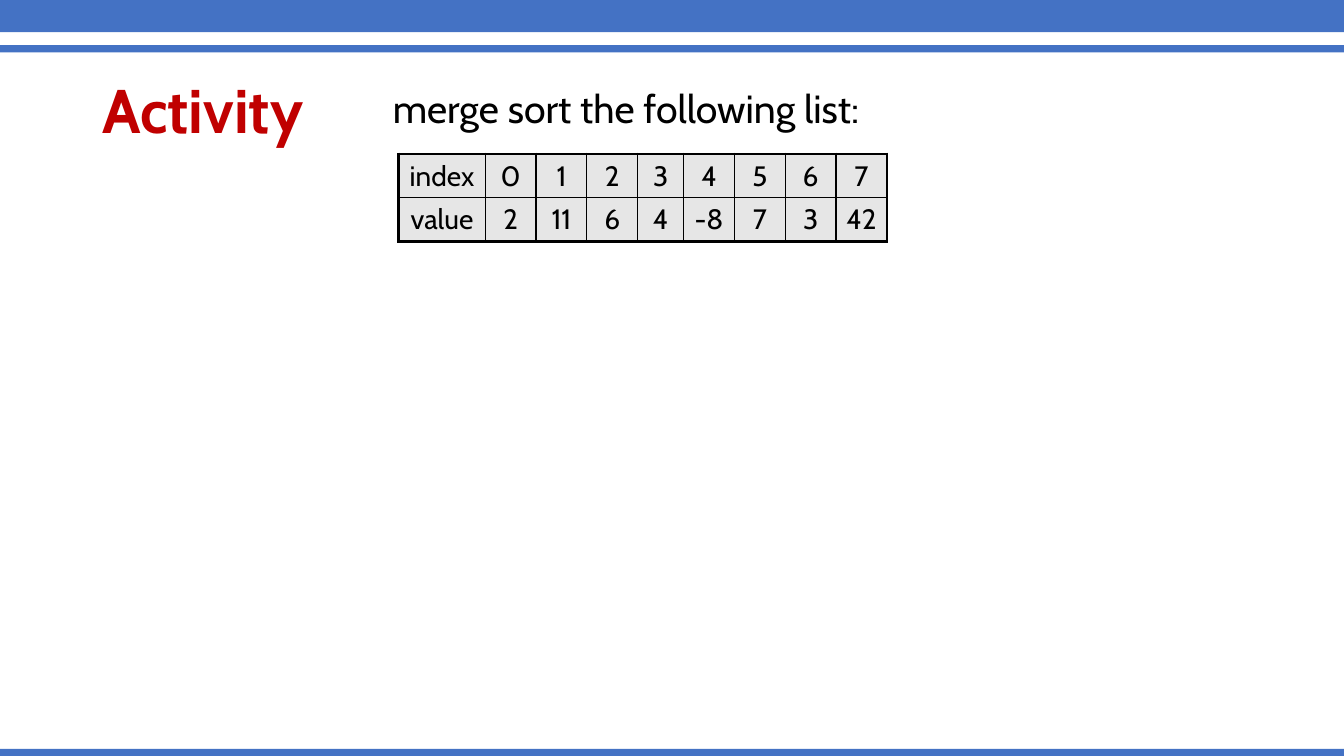
from dataclasses import dataclass

from lxml.etree import SubElement
from pptx import Presentation
from pptx.dml.color import RGBColor
from pptx.enum.shapes import MSO_SHAPE
from pptx.enum.text import MSO_ANCHOR, PP_ALIGN
from pptx.oxml.ns import qn
from pptx.util import Cm, Pt


@dataclass(frozen=True)
class Theme:
    font: str = "Cabin"
    band: str = "4472C4"
    title: str = "C00000"
    text: str = "000000"
    cell: str = "E6E6E6"
    title_size: int = 44
    prompt_size: int = 28
    cell_size: int = 20
    outer: float = 2.25
    inner: float = 1


THEME = Theme()
WIDTH, HEIGHT = 33.87, 19.05
ROWS = [
    ["index", "0", "1", "2", "3", "4", "5", "6", "7"],
    ["value", "2", "11", "6", "4", "-8", "7", "3", "42"],
]
COL_WIDTHS = [2.18] + [1.28] * 3 + [1.16] + [1.28] * 4


def apply(obj, formats):
    for name, value in formats.items():
        setattr(obj, name, value)


def write(tf, text, size, color, bold=False, **formats):
    p = tf.paragraphs[0]
    apply(p, formats)
    r = p.add_run()
    r.text = text
    apply(r.font, {"name": THEME.font, "size": Pt(size), "bold": bold})
    r.font.color.rgb = RGBColor.from_string(color)


def add_band(s, left, top, width, height):
    sp = s.shapes.add_shape(MSO_SHAPE.RECTANGLE, Cm(left), Cm(top), Cm(width), Cm(height))
    sp.shadow.inherit = False
    sp.fill.solid()
    sp.fill.fore_color.rgb = RGBColor.from_string(THEME.band)
    sp.line.fill.background()


def add_text(s, box, text, size, color, anchor, **formats):
    tf = s.shapes.add_textbox(*map(Cm, box)).text_frame
    apply(tf, {"word_wrap": True, "vertical_anchor": anchor})
    write(tf, text, size, color, line_spacing=0.9, **formats)


def add_border(cell, side, width):
    ln = SubElement(cell._tc.get_or_add_tcPr(), qn(f"a:ln{side}"), w=str(Pt(width)))
    fill = SubElement(ln, qn("a:solidFill"))
    SubElement(fill, qn("a:srgbClr"), val=THEME.text)


def add_list_table(s, left, top, width, height):
    frame = s.shapes.add_table(len(ROWS), len(COL_WIDTHS), Cm(left), Cm(top), Cm(width), Cm(height))
    table = frame.table
    apply(table, {"first_row": False, "horz_banding": False})
    for col, col_width in zip(table.columns, COL_WIDTHS):
        col.width = Cm(col_width)
    for i, row in enumerate(ROWS):
        for j, text in enumerate(row):
            cell = table.cell(i, j)
            edges = {
                "L": j == 0,
                "R": j == len(row) - 1,
                "T": i == 0,
                "B": i == len(ROWS) - 1,
            }
            for side, is_outer in edges.items():
                add_border(cell, side, THEME.outer if is_outer else THEME.inner)
            cell.fill.solid()
            cell.fill.fore_color.rgb = RGBColor.from_string(THEME.cell)
            write(cell.text_frame, text, THEME.cell_size, THEME.text, alignment=PP_ALIGN.CENTER)


def add_frame(s, width, height):
    for top, thickness in [(-0.15, 0.96), (1.14, 0.18), (height - 0.18, 0.18)]:
        add_band(s, 0, top, width, thickness)


def add_activity(s, left, top, width, height):
    add_text(s, (left, top, width, height), "Activity", THEME.title_size, THEME.title,
             MSO_ANCHOR.MIDDLE, bold=True)
    add_list_table(s, left + 7.72, top + 2.87, sum(COL_WIDTHS), 2.21)
    add_text(s, (left + 7.32, top + 1.12, 13.34, 1.45), "merge sort the following list:",
             THEME.prompt_size, THEME.text, MSO_ANCHOR.TOP, space_before=Pt(10))


def main():
    prs = Presentation()
    apply(prs, {"slide_width": Cm(WIDTH), "slide_height": Cm(HEIGHT)})
    s = prs.slides.add_slide(prs.slide_layouts[6])
    add_frame(s, WIDTH, HEIGHT)
    add_activity(s, 2.33, 1.01, 29.21, 3.68)
    prs.save("out.pptx")


if __name__ == "__main__":
    main()
